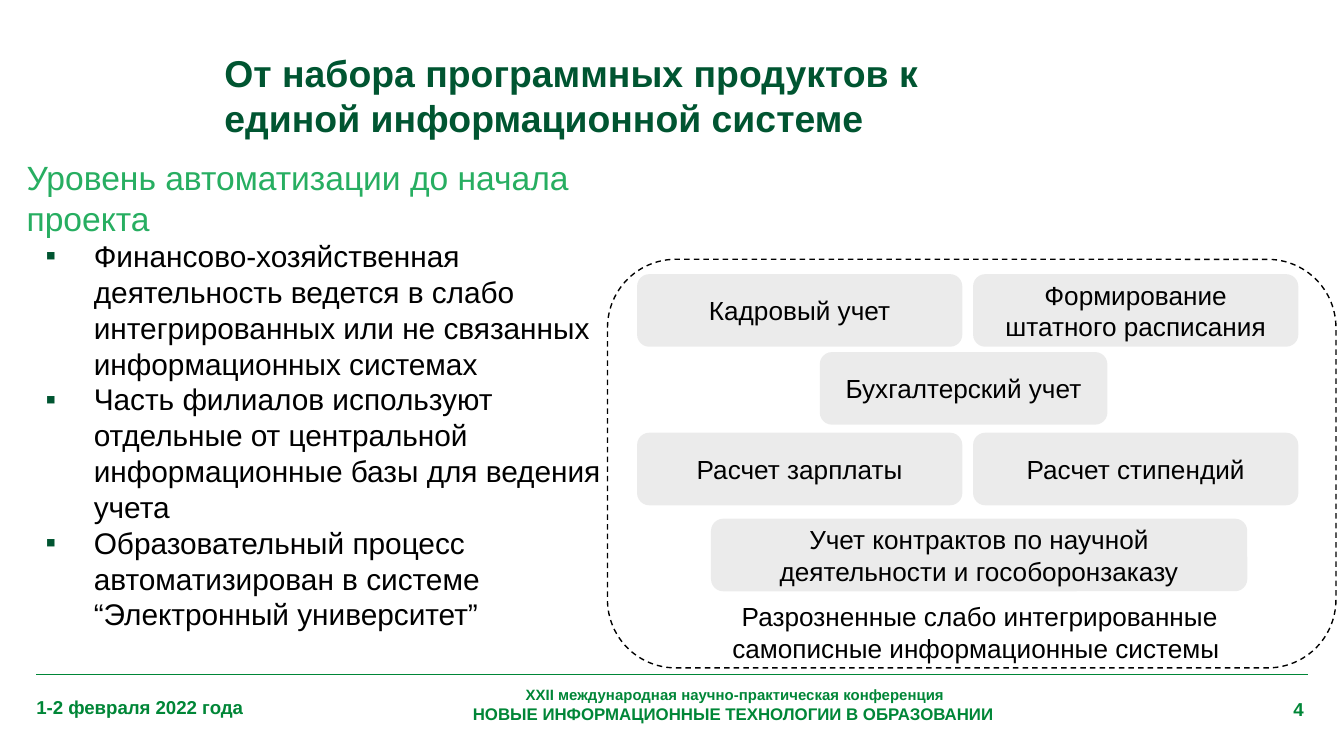
import dataclasses

import lxml.etree
import pptx
import pptx.dml.color
import pptx.enum.dml
import pptx.enum.shapes
import pptx.enum.text
import pptx.oxml.ns
import pptx.util

Inches = pptx.util.Inches
Pt = pptx.util.Pt
ALIGN = pptx.enum.text.PP_ALIGN
ANCHOR = pptx.enum.text.MSO_ANCHOR
SHAPE = pptx.enum.shapes.MSO_SHAPE


@dataclasses.dataclass(frozen=True)
class Theme:
    """Font, colours and type sizes of the slide."""
    font: str = "Arial"
    title: str = "005531"
    heading: str = "27AE61"
    footer: str = "008637"
    text: str = "000000"
    card: str = "C0C0C0"
    card_opacity: int = 30
    title_size: int = 20
    heading_size: int = 18
    body_size: int = 16
    label_size: int = 14
    footer_size: int = 10
    event_size: int = 9
    series_size: int = 8


THEME = Theme()


def rgb(value):
    """Return a colour from its hex value."""
    return pptx.dml.color.RGBColor.from_string(value)


def sub(parent, tag, **attrs):
    """Append a DrawingML element to a parent."""
    return lxml.etree.SubElement(parent, pptx.oxml.ns.qn(tag), attrs)


def set_frame(tf, inset_x=0, inset_y=0, anchor=ANCHOR.TOP):
    """Set the wrapping, insets and anchor of a text frame."""
    formats = {
        "word_wrap": True, "auto_size": pptx.enum.text.MSO_AUTO_SIZE.NONE,
        "margin_left": Inches(inset_x), "margin_right": Inches(inset_x),
        "margin_top": Inches(inset_y), "margin_bottom": Inches(inset_y),
        "vertical_anchor": anchor,
    }
    for name, value in formats.items():
        setattr(tf, name, value)


def write(p, text, size, color, bold=False, align=ALIGN.LEFT):
    """Write one formatted run into a paragraph."""
    p.alignment = align
    r = p.add_run()
    r.text = text
    formats = {"name": THEME.font, "size": Pt(size), "bold": bold}
    for name, value in formats.items():
        setattr(r.font, name, value)
    r.font.color.rgb = rgb(color)


def add_text(s, box, inset_x=0, inset_y=0, anchor=ANCHOR.TOP):
    """Add an empty text box and return its text frame."""
    tf = s.shapes.add_textbox(*map(Inches, box)).text_frame
    set_frame(tf, inset_x, inset_y, anchor)
    return tf


def add_title(s, box, text):
    """Place and format the title placeholder."""
    sp = s.shapes.title
    for name, value in zip(("left", "top", "width", "height"), box):
        setattr(sp, name, Inches(value))
    set_frame(sp.text_frame, 0.06, 0, ANCHOR.MIDDLE)
    write(sp.text_frame.paragraphs[0], text, THEME.title_size, THEME.title, True)


def add_body(s, box, heading, bullets):
    """Add a heading followed by a bulleted list."""
    tf = add_text(s, box, 0.1, 0.05)
    write(tf.paragraphs[0], heading, THEME.heading_size, THEME.heading)
    for text in bullets:
        p = tf.add_paragraph()
        pPr = p._p.get_or_add_pPr()
        pPr.set("marL", str(Inches(0.5)))
        pPr.set("indent", str(Inches(-0.36)))
        sub(sub(pPr, "a:buClr"), "a:srgbClr", val=THEME.title)
        sub(pPr, "a:buFont", typeface=THEME.font)
        sub(pPr, "a:buChar", char="▪")
        write(p, text, THEME.body_size, THEME.text)


def add_rounded(s, box):
    """Add a rounded rectangle without a shadow."""
    sp = s.shapes.add_shape(SHAPE.ROUNDED_RECTANGLE, *map(Inches, box))
    sp.shadow.inherit = False
    sp.adjustments[0] = 0.167
    return sp


def add_card(s, box, label):
    """Add a translucent card with a centred label."""
    sp = add_rounded(s, box)
    sp.fill.solid()
    sp.fill.fore_color.rgb = rgb(THEME.card)
    color = sp.fill._xPr.find(".//" + pptx.oxml.ns.qn("a:srgbClr"))
    sub(color, "a:alpha", val=str(THEME.card_opacity * 1000))
    sp.line.fill.background()
    set_frame(sp.text_frame, 0.1, 0.1, ANCHOR.MIDDLE)
    write(sp.text_frame.paragraphs[0], label, THEME.label_size, THEME.text,
          align=ALIGN.CENTER)


def add_systems(s, box, rows, caption):
    """Add the dashed panel with its rows of system cards and caption."""
    left, top, width, height = box
    panel = add_rounded(s, box)
    panel.fill.background()
    panel.line.color.rgb = rgb(THEME.text)
    panel.line.width = Pt(0.75)
    panel.line.dash_style = pptx.enum.dml.MSO_LINE.DASH
    gap = 0.08
    for dx, dy, card_width, labels in rows:
        for i, label in enumerate(labels):
            x = left + dx + i * (card_width + gap)
            add_card(s, (x, top + dy, card_width, 0.54), label)
    tf = add_text(s, (left + 0.42, top + height - 0.6, width - 0.72, 0.67), 0.1, 0.1)
    write(tf.paragraphs[0], caption, THEME.label_size, THEME.text, align=ALIGN.CENTER)


def add_footer(s, box, date, series, event, number):
    """Add the rule, date, conference name and slide number."""
    left, top, width, _ = box
    rule = s.shapes.add_connector(
        pptx.enum.shapes.MSO_CONNECTOR.STRAIGHT,
        *map(Inches, (left, top, left + width, top)))
    rule.line.color.rgb = rgb(THEME.footer)
    rule.line.width = Pt(0.75)
    sub(rule._element.spPr, "a:effectLst")
    tf = add_text(s, (left, top + 0.16, 1.89, 0.17), anchor=ANCHOR.MIDDLE)
    write(tf.paragraphs[0], date, THEME.footer_size, THEME.footer, True)
    p = add_text(s, (left + 1.58, top + 0.08, 7.24, 0.29)).paragraphs[0]
    write(p, series, THEME.series_size, THEME.footer, True, ALIGN.CENTER)
    p.add_line_break()
    write(p, event, THEME.event_size, THEME.footer, True, ALIGN.CENTER)
    tf = add_text(s, (left + width - 0.87, top + 0.17, 0.84, 0.17))
    write(tf.paragraphs[0], number, THEME.footer_size, THEME.footer, True, ALIGN.RIGHT)


def main():
    """Build and save the slide."""
    prs = pptx.Presentation()
    prs.slide_width = Inches(10)
    prs.slide_height = prs.slide_width * 9 // 16
    s = prs.slides.add_slide(prs.slide_layouts.get_by_name("Title Only"))
    add_title(s, (1.61, 0.37, 5.83, 0.67),
              "От набора программных продуктов к единой информационной системе")
    add_body(s, (0.1, 1.12, 4.48, 3.21), "Уровень автоматизации до начала проекта", [
        "Финансово-хозяйственная деятельность ведется в слабо интегрированных "
        "или не связанных информационных системах",
        "Часть филиалов используют отдельные от центральной информационные базы "
        "для ведения учета",
        "Образовательный процесс автоматизирован в системе “Электронный университет”",
    ])
    add_systems(s, (4.52, 1.93, 5.42, 3.04), [
        (0.22, 0.11, 2.42, ["Кадровый учет", "Формирование штатного расписания"]),
        (1.58, 0.69, 2.14, ["Бухгалтерский учет"]),
        (0.22, 1.29, 2.42, ["Расчет зарплаты", "Расчет стипендий"]),
        (0.77, 1.93, 3.99,
         ["Учет контрактов по научной деятельности и гособоронзаказу"]),
    ], "Разрозненные слабо интегрированные самописные информационные системы ")
    add_footer(s, (0.27, 5.02, 9.46, 0.61), "1-2 февраля 2022 года",
               "XXII международная научно-практическая конференция",
               "НОВЫЕ ИНФОРМАЦИОННЫЕ ТЕХНОЛОГИИ В ОБРАЗОВАНИИ ", "4")
    prs.save("out.pptx")


if __name__ == "__main__":
    main()
